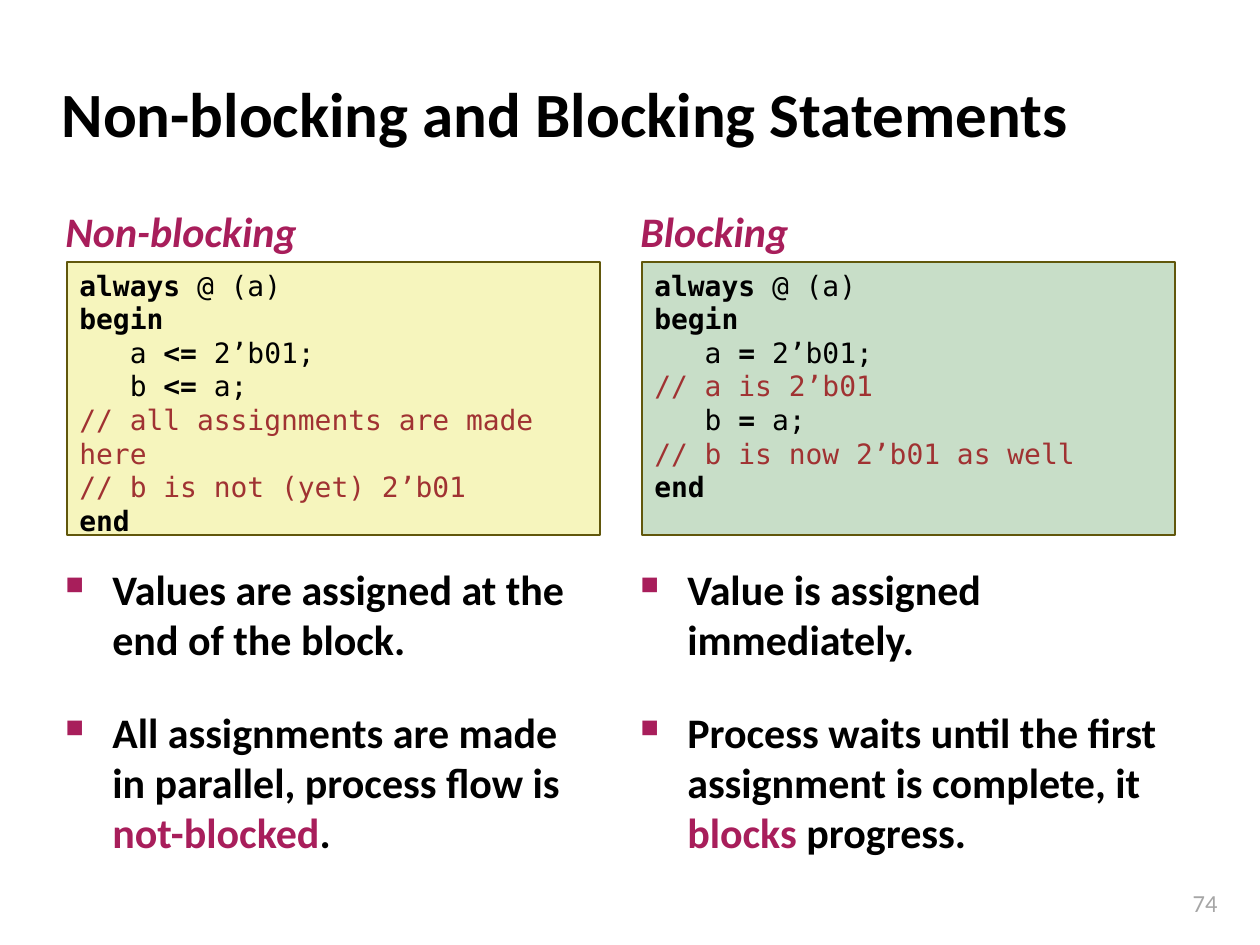
from lxml import etree
from pptx import Presentation
from pptx.dml.color import RGBColor
from pptx.enum.shapes import MSO_SHAPE
from pptx.enum.text import MSO_ANCHOR, PP_ALIGN
from pptx.oxml.ns import qn
from pptx.util import Emu, Pt

RECTANGLE = MSO_SHAPE.RECTANGLE
TOP, MIDDLE = MSO_ANCHOR.TOP, MSO_ANCHOR.MIDDLE
LEFT, RIGHT = PP_ALIGN.LEFT, PP_ALIGN.RIGHT

BLACK = RGBColor(0x00, 0x00, 0x00)
GREY = RGBColor(0xA6, 0xA6, 0xA6)
MAGENTA = RGBColor(0xA8, 0x1E, 0x5B)
COMMENT_RED = RGBColor(0xA0, 0x32, 0x32)
YELLOW = RGBColor(0xF6, 0xF5, 0xBD)
GREEN = RGBColor(0xC8, 0xDE, 0xC8)
OLIVE = RGBColor(0x61, 0x57, 0x0C)

BODY_FONT = "Calibri"
CODE_FONT = "DejaVu Sans Mono"
PX = 914400 // 126
BULLET_INDENT = 47

NON_BLOCKING_CODE = [
    [("always ", True), ("@ (a)", False)],
    [("begin", True)],
    [("   a ", False), ("<=", True), (" 2’b01;", False)],
    [("   b ", False), ("<=", True), (" a;", False)],
    [("// all assignments are made here", False)],
    [("// b is not (yet) 2’b01", False)],
    [("end", True)],
]
BLOCKING_CODE = [
    [("always ", True), ("@ (a)", False)],
    [("begin", True)],
    [("   a ", False), ("= ", True), ("2’b01;", False)],
    [("// a is 2’b01", False)],
    [("   b ", False), ("= ", True), ("a;", False)],
    [("// b is now 2’b01 as well", False)],
    [("end", True)],
]
NON_BLOCKING_POINTS = [
    [("Values are assigned at the end of the block.", BLACK)],
    [("All assignments are made in parallel, process flow is ", BLACK),
     ("not-blocked", MAGENTA), (".", BLACK)],
]
BLOCKING_POINTS = [
    [("Value is assigned immediately.", BLACK)],
    [("Process waits until the first assignment is complete, it ", BLACK),
     ("blocks ", MAGENTA), ("progress.", BLACK)],
]


class SlideBuilder:
    def __init__(self, slide):
        self.slide = slide

    def place(self, shape, area):
        shape.left, shape.top, shape.width, shape.height = (Emu(v * PX) for v in area)

    def style(self, span, size, color, bold=False, italic=False, name=BODY_FONT):
        font = span.font
        font.name, font.size = name, Pt(size)
        font.bold, font.italic = bold, italic
        font.color.rgb = color

    def add_span(self, para, text, *style, **options):
        span = para.add_run()
        span.text = text
        self.style(span, *style, **options)

    def paragraphs(self, frame, count):
        return [frame.paragraphs[0]] + [frame.add_paragraph() for _ in range(count - 1)]

    def title(self, text, area):
        box = self.slide.shapes.title
        self.place(box, area)
        frame = box.text_frame
        frame.text = text
        frame.word_wrap = True
        frame.vertical_anchor = MIDDLE
        para = frame.paragraphs[0]
        para.alignment = LEFT
        self.style(para.runs[0], 36, BLACK, bold=True)

    def text_box(self, area):
        box = self.slide.shapes.add_textbox(*(Emu(v * PX) for v in area))
        box.text_frame.word_wrap = True
        return box.text_frame

    def label(self, text, area, size, color, emphasis=False, alignment=LEFT):
        frame = self.text_box(area)
        frame.text = text
        para = frame.paragraphs[0]
        para.alignment = alignment
        self.style(para.runs[0], size, color, bold=emphasis, italic=emphasis)

    def code(self, lines, area, fill):
        box = self.slide.shapes.add_shape(RECTANGLE, *(Emu(v * PX) for v in area))
        box.shadow.inherit = False
        box.fill.solid()
        box.fill.fore_color.rgb = fill
        box.line.color.rgb = OLIVE
        box.line.width = Pt(0.75)
        frame = box.text_frame
        frame.word_wrap = True
        frame.vertical_anchor = TOP
        for para, line in zip(self.paragraphs(frame, len(lines)), lines):
            para.alignment = LEFT
            color = COMMENT_RED if line[0][0].startswith("//") else BLACK
            for text, bold in line:
                self.add_span(para, text, 16, color, bold=bold, name=CODE_FONT)

    def bullets(self, points, area):
        frame = self.text_box(area)
        for para, point in zip(self.paragraphs(frame, len(points)), points):
            para.space_before = Pt(24)
            self.add_bullet(para)
            for text, color in point:
                self.add_span(para, text, 24, color, bold=True)

    def add_bullet(self, para):
        properties = para._p.get_or_add_pPr()
        properties.set("marL", str(BULLET_INDENT * PX))
        properties.set("indent", str(-BULLET_INDENT * PX))
        color = etree.SubElement(properties, qn("a:buClr"))
        etree.SubElement(color, qn("a:srgbClr"), val=str(MAGENTA))
        etree.SubElement(properties, qn("a:buSzPct"), val="60000")
        etree.SubElement(properties, qn("a:buChar"), char="■")


def main():
    deck = Presentation()
    deck.slide_width, deck.slide_height = Emu(1260 * PX), Emu(945 * PX)
    page = SlideBuilder(deck.slides.add_slide(deck.slide_layouts[5]))

    page.title("Non-blocking and Blocking Statements", (49, 60, 1114, 105))
    columns = [
        ("Non-blocking", NON_BLOCKING_CODE, YELLOW, NON_BLOCKING_POINTS, 53, 67, 535),
        ("Blocking", BLOCKING_CODE, GREEN, BLOCKING_POINTS, 628, 642, 546),
    ]
    for heading, code, fill, points, left, code_left, width in columns:
        page.code(code, (code_left, 262, 533, 273), fill)
        page.label(heading, (left, 199, 533, 63), 24, MAGENTA, emphasis=True)
        page.bullets(points, (left, 557, width, 310))
    page.label("74", (1134, 882, 96, 43), 14, GREY, alignment=RIGHT)

    deck.save("out.pptx")


if __name__ == "__main__":
    main()
